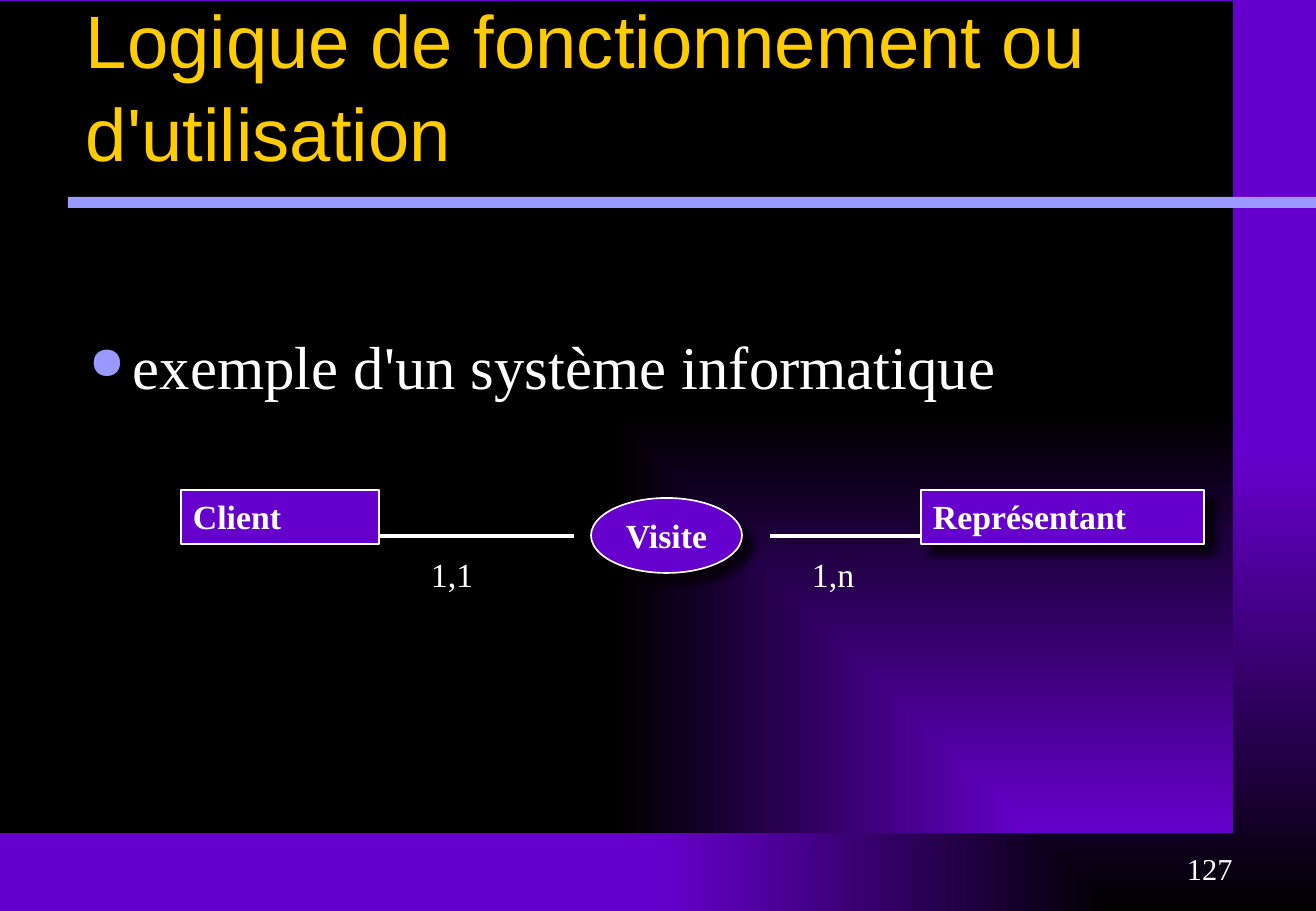
from lxml.etree import SubElement
from pptx import Presentation
from pptx.dml.color import RGBColor
from pptx.enum.shapes import MSO_CONNECTOR as CONN, MSO_SHAPE as SHAPE
from pptx.enum.text import MSO_ANCHOR as ANCHOR, PP_ALIGN as ALIGN
from pptx.oxml.ns import qn
from pptx.util import Emu, Pt

# Content: lengths in px
W, H = 1316, 911
SERIF, SANS = "Times New Roman", "Arial"
BLACK, WHITE, PURPLE, LILAC, GOLD = "000000", "FFFFFF", "6600CC", "9999FF", "FFCC00"

PANEL = (0, 1, 1233, 832)
RULE = (68, 197, 1248, 11)
TITLE = ("Logique de fonctionnement ou d'utilisation", (74, 55, 1154, 127))
BODY = ("exemple d'un système informatique", (77, 323, 1119, 446))
NUMBER = ("127", (1175, 844, 141, 61))
NODES = [  # text, preset, box
    ("Client", SHAPE.RECTANGLE, (181, 490, 198, 54)),
    ("Visite", SHAPE.OVAL, (591, 498, 151, 75)),
    ("Représentant", SHAPE.RECTANGLE, (921, 490, 283, 54)),
]
LINK_Y = 536
LINKS = [(378, 574), (770, 922)]
CARDINALITIES = [("1,1", (419, 548, 67, 54)), ("1,n", (800, 548, 67, 54))]


def px(n):
    return Emu(round(n * 914400 / 121.5))


def rgb(color):
    return RGBColor.from_string(color)


def add_xml(parent, tag, **attrs):
    return SubElement(parent, qn(tag), {k: str(v) for k, v in attrs.items()})


def corner_gradient(fill, element, start, end):
    """Rectangular gradient spreading from the bottom right corner."""
    fill.gradient()
    for stop, color, pos in zip(fill.gradient_stops, (start, end), (0, 1)):
        stop.color.rgb = rgb(color)
        stop.position = pos
    grad = next(element.iter(qn("a:gradFill")))
    grad.remove(grad.find(qn("a:lin")))
    path = add_xml(grad, "a:path", path="rect")
    add_xml(path, "a:fillToRect", l=100000, t=100000)


def add_box(preset, box):
    sp = s.shapes.add_shape(preset, *map(px, box))
    sp.shadow.inherit = False
    sp.line.fill.background()
    return sp


def write(sp, text, size, color=WHITE, font=SERIF, bold=False, wrap=True,
          anchor=ANCHOR.TOP, align=ALIGN.LEFT, before=2):
    tf = sp.text_frame
    tf.word_wrap = wrap
    tf.vertical_anchor = anchor
    p = tf.paragraphs[0]
    p.alignment = align
    p.space_before = Pt(before)
    r = p.add_run()
    r.text = text
    r.font.name, r.font.size, r.font.bold = font, Pt(size), bold
    r.font.color.rgb = rgb(color)
    return p


def add_text(text, box, size, **style):
    return write(s.shapes.add_textbox(*map(px, box)), text, size, **style)


prs = Presentation()
prs.slide_width, prs.slide_height = px(W), px(H)
s = prs.slides.add_slide(prs.slide_layouts[6])

# Background, panel and rule
corner_gradient(s.background.fill, s.element, BLACK, PURPLE)
panel = add_box(SHAPE.RECTANGLE, PANEL)
corner_gradient(panel.fill, panel.element, PURPLE, BLACK)
rule = add_box(SHAPE.RECTANGLE, RULE)
rule.fill.solid()
rule.fill.fore_color.rgb = rgb(LILAC)

# Entities and relation, with drop shadows
for text, preset, box in NODES:
    sp = add_box(preset, box)
    sp.fill.solid()
    sp.fill.fore_color.rgb = rgb(PURPLE)
    sp.line.color.rgb = rgb(WHITE)
    sp.line.width = Pt(1)
    shadow = add_xml(sp.element.spPr.find(qn("a:effectLst")), "a:outerShdw",
                     blurRad=Pt(5), dist=Pt(8.5), dir=45 * 60000, algn="ctr", rotWithShape=0)
    add_xml(add_xml(shadow, "a:srgbClr", val=BLACK), "a:alpha", val=75000)
    if preset == SHAPE.OVAL:
        write(sp, text, 20, bold=True, wrap=False, anchor=ANCHOR.MIDDLE, align=ALIGN.CENTER)
    else:
        write(sp, text, 20, bold=True)

# Links and cardinalities
for x1, x2 in LINKS:
    link = s.shapes.add_connector(CONN.STRAIGHT, px(x1), px(LINK_Y), px(x2), px(LINK_Y))
    link.line.color.rgb = rgb(WHITE)
    link.line.width = Pt(2)
    add_xml(link.element.spPr, "a:effectLst")
for text, box in CARDINALITIES:
    add_text(text, box, 20, wrap=False)

# Title, bulleted line and slide number
title = add_text(*TITLE, 44, color=GOLD, font=SANS, anchor=ANCHOR.BOTTOM, before=0)
title.line_spacing = 1.04
pPr = add_text(*BODY, 36, before=5)._p.get_or_add_pPr()
pPr.set("marL", str(px(44)))
pPr.set("indent", str(px(-44)))
add_xml(add_xml(pPr, "a:buClr"), "a:srgbClr", val=LILAC)
add_xml(pPr, "a:buSzPct", val=75000)
add_xml(pPr, "a:buChar", char="●")
add_text(*NUMBER, 18)

prs.save("out.pptx")
